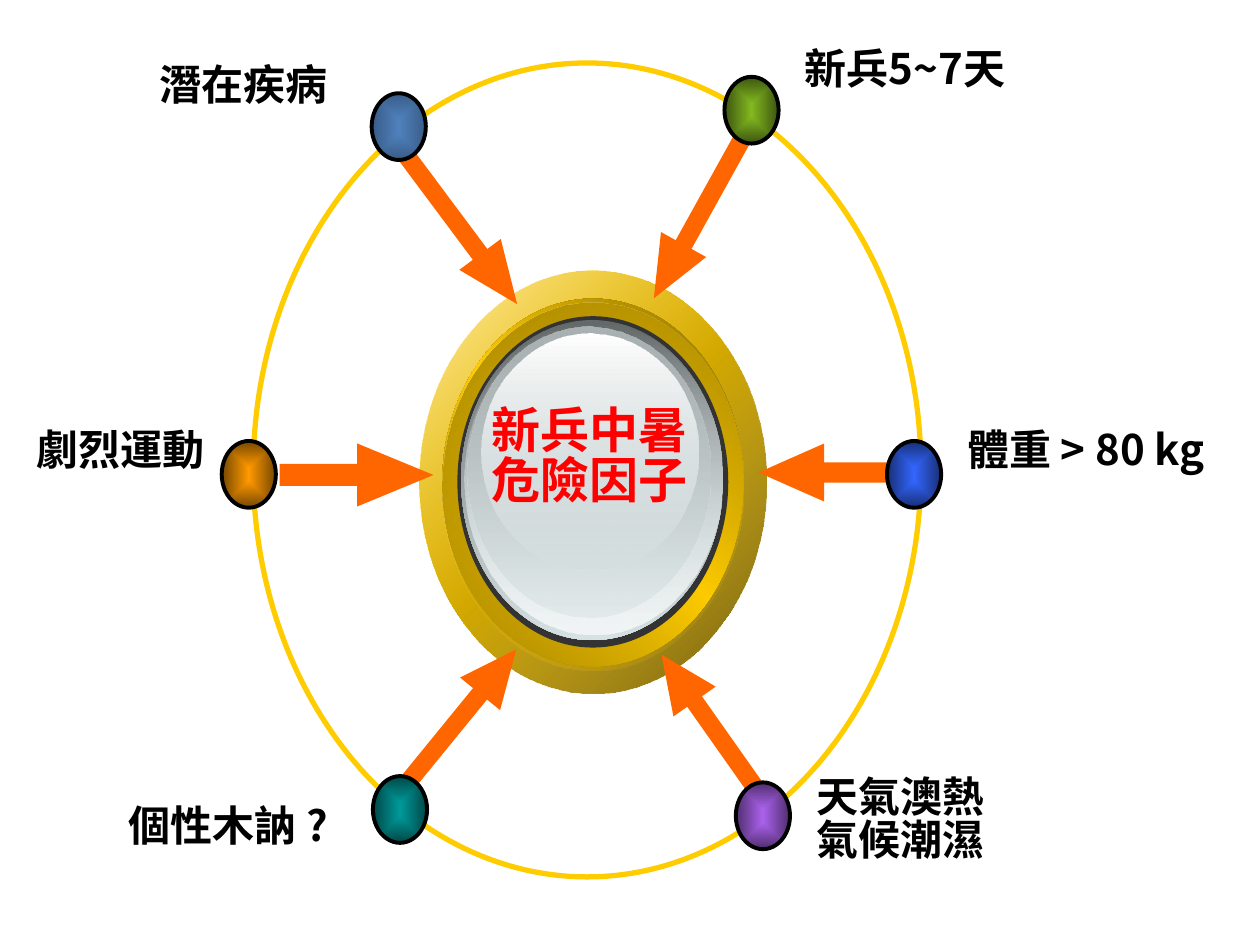
"""Build a slide of six risk factors pointing at a central medallion."""
from pptx import Presentation
from pptx import oxml, util as u
from pptx.dml.color import RGBColor
from pptx.enum import shapes, text
from pptx.oxml import ns

BLACK = RGBColor(0x00, 0x00, 0x00)
WHITE = RGBColor(0xFF, 0xFF, 0xFF)
RED = RGBColor(0xFF, 0x00, 0x00)
ORANGE = RGBColor(0xFF, 0x66, 0x00)
GOLD = RGBColor(0xFF, 0xCC, 0x00)
GOLD_SHADE = RGBColor(0x76, 0x5E, 0x00)
GOLD_DARK = RGBColor(0x8A, 0x6E, 0x00)
GOLD_MID = RGBColor(0xA2, 0x82, 0x00)
CHARCOAL = RGBColor(0x33, 0x33, 0x33)
SILVER_DARK = RGBColor(0x63, 0x68, 0x69)
SILVER_MID = RGBColor(0xAA, 0xB2, 0xB3)
SILVER = RGBColor(0xD6, 0xE1, 0xE2)
SILVER_LIGHT = RGBColor(0xF1, 0xF5, 0xF5)
AMBER, AMBER_DARK = RGBColor(0xFF, 0x99, 0x00), RGBColor(0x76, 0x47, 0x00)
TEAL, TEAL_DARK = RGBColor(0x00, 0x99, 0x99), RGBColor(0x00, 0x47, 0x47)
PURPLE, PURPLE_DARK = RGBColor(0xAA, 0x62, 0xEC), RGBColor(0x4F, 0x2D, 0x6D)
BLUE, BLUE_DARK = RGBColor(0x33, 0x66, 0xFF), RGBColor(0x18, 0x2F, 0x76)
GREEN, GREEN_DARK = RGBColor(0x82, 0xB8, 0x20), RGBColor(0x3C, 0x55, 0x0F)
STEEL, STEEL_DARK = RGBColor(0x4F, 0x81, 0xBD), RGBColor(0x39, 0x5C, 0x87)

LEFT, CENTER, RIGHT = text.PP_ALIGN.LEFT, text.PP_ALIGN.CENTER, text.PP_ALIGN.RIGHT

RINGS = [
    ((3.33, 2.15, 2.75, 3.35), [(0, WHITE, 100), (50, GOLD, 100), (100, WHITE, 100)], 45),
    ((3.33, 2.15, 2.75, 3.35), [(0, GOLD, 32), (100, GOLD_SHADE, 100)], 45),
    ((3.51, 2.37, 2.39, 2.92), [(0, GOLD_DARK, 100), (50, GOLD, 100), (100, GOLD_DARK, 100)], 315),
    ((3.51, 2.4, 2.39, 2.92), [(0, GOLD_MID, 100), (100, GOLD, 0)], 45),
    ((3.63, 2.51, 2.15, 2.63), CHARCOAL, None),
    ((3.66, 2.54, 2.08, 2.54), [(0, SILVER_DARK, 100), (100, SILVER, 100)], 90),
    ((3.69, 2.56, 2.04, 2.48), [(0, SILVER, 0), (100, SILVER_LIGHT, 100)], 90),
    ((3.71, 2.59, 1.93, 2.31), [(0, SILVER_MID, 100), (100, SILVER, 48)], 90),
    ((3.82, 2.65, 1.72, 1.88), [(0, WHITE, 100), (100, SILVER, 38)], 90),
]
LABELS = [
    ((6.29, 0.35, 1.97, 0.65), ["新兵5~7天"], LEFT),
    ((7.58, 3.37, 2.3, 0.65), ["體重 > 80 kg"], LEFT),
    ((6.37, 6.13, 1.55, 0.91), ["天氣澳熱", "氣候潮濕"], CENTER),
    ((0.1, 3.37, 1.62, 0.64), ["劇烈運動"], RIGHT),
    ((0.81, 6.36, 1.89, 0.65), ["個性木訥 ?"], RIGHT),
    ((1.17, 0.48, 1.62, 0.64), ["潛在疾病"], LEFT),
]
ARROWS = [
    ((4.81, 1.52, 1.47, 0.41), 119, 1.19),
    ((4.96, 5.55, 1.37, 0.41), 234.8, 1.11),
    ((2.93, 1.62, 1.47, 0.41), 53.3, 1.2),
    ((2.98, 5.48, 1.37, 0.41), 309.2, 1.11),
    ((6.02, 3.52, 1.05, 0.46), 180, 1.13),
    ((2.22, 3.52, 1.22, 0.5), 0, 1.21),
]
NODES = [
    (1.76, 3.5, AMBER, AMBER_DARK),
    (2.96, 6.16, TEAL, TEAL_DARK),
    (5.84, 6.21, PURPLE, PURPLE_DARK),
    (7.04, 3.5, BLUE, BLUE_DARK),
    (5.75, 0.61, GREEN, GREEN_DARK),
    (2.95, 0.74, STEEL, STEEL_DARK),
]


class Deck:
    """Hold the style and the current slide, and draw each kind of element."""

    font = "Noto Sans CJK SC"
    line_spacing = 0.85
    node_size = (0.43, 0.53)

    def __init__(self, prs):
        """Add a blank slide to the presentation."""
        self.s = prs.slides.add_slide(prs.slide_layouts[6])

    def shape(self, kind, box, fill=None, line=None, width=0):
        """Add a preset shape with a plain fill and line."""
        sp = self.s.shapes.add_shape(kind, *map(u.Inches, box))
        sp.shadow.inherit = False
        if fill is None:
            sp.fill.background()
        else:
            sp.fill.solid()
            sp.fill.fore_color.rgb = fill
        if line is None:
            sp.line.fill.background()
        else:
            sp.line.color.rgb = line
            sp.line.width = u.Pt(width)
        return sp

    def ellipse(self, box, fill=None, line=None, width=0):
        """Add an ellipse."""
        return self.shape(shapes.MSO_SHAPE.OVAL, box, fill, line, width)

    def gradient(self, sp, stops, angle=None):
        """Give a solid shape a linear gradient, or one from its centre."""
        gs = "".join(
            f'<a:gs pos="{pos * 1000}"><a:srgbClr val="{color}">'
            f'<a:alpha val="{alpha * 1000}"/></a:srgbClr></a:gs>'
            for pos, color, alpha in stops)
        if angle is None:
            way = ('<a:path path="shape"><a:fillToRect l="50000" t="50000" '
                   'r="50000" b="50000"/></a:path>')
        else:
            way = f'<a:lin ang="{angle * 60000}" scaled="1"/>'
        fill = oxml.parse_xml(
            f'<a:gradFill {ns.nsdecls("a")} rotWithShape="1">'
            f'<a:gsLst>{gs}</a:gsLst>{way}</a:gradFill>')
        props = sp._element.spPr
        props.replace(props.find(ns.qn("a:solidFill")), fill)

    def ring(self, box, fill, angle):
        """Add one layer of the medallion."""
        if angle is None:
            self.ellipse(box, fill)
        else:
            self.gradient(self.ellipse(box, WHITE), fill, angle)

    def node(self, x, y, color, dark):
        """Add an outlined bead on the orbit."""
        sp = self.ellipse((x, y, *self.node_size), color, BLACK, 2.25)
        self.gradient(sp, [(0, color, 100), (100, dark, 100)])

    def arrow(self, box, angle, head):
        """Add a block arrow turned by an angle."""
        sp = self.shape(shapes.MSO_SHAPE.RIGHT_ARROW, box, ORANGE)
        sp.adjustments[0] = 0.35
        sp.adjustments[1] = head
        sp.rotation = angle

    def label(self, box, lines, align, size=24, color=BLACK):
        """Add bold text, one paragraph a line."""
        tf = self.s.shapes.add_textbox(*map(u.Inches, box)).text_frame
        tf.word_wrap = False
        tf.auto_size = text.MSO_AUTO_SIZE.SHAPE_TO_FIT_TEXT
        tf.text = "\n".join(lines)
        for p in tf.paragraphs:
            p.alignment = align
            p.line_spacing = self.line_spacing
            p.font.name = self.font
            p.font.size = u.Pt(size)
            p.font.bold = True
            p.font.color.rgb = color
            for r in p.runs:
                ea = oxml.parse_xml(f'<a:ea {ns.nsdecls("a")} typeface="{self.font}"/>')
                r._r.get_or_add_rPr().append(ea)


def main():
    """Draw the slide and save it."""
    prs = Presentation()
    prs.slide_width, prs.slide_height = u.Inches(10), u.Inches(7.5)
    deck = Deck(prs)
    deck.ellipse((2.01, 0.5, 5.3, 6.46), line=GOLD, width=3)
    for ring in RINGS:
        deck.ring(*ring)
    deck.label((3.75, 3.19, 1.86, 1.33), ["新兵中暑", "危險因子"], CENTER, 28, RED)
    for label in LABELS:
        deck.label(*label)
    for arrow in ARROWS:
        deck.arrow(*arrow)
    for node in NODES:
        deck.node(*node)
    prs.save("out.pptx")


if __name__ == "__main__":
    main()
